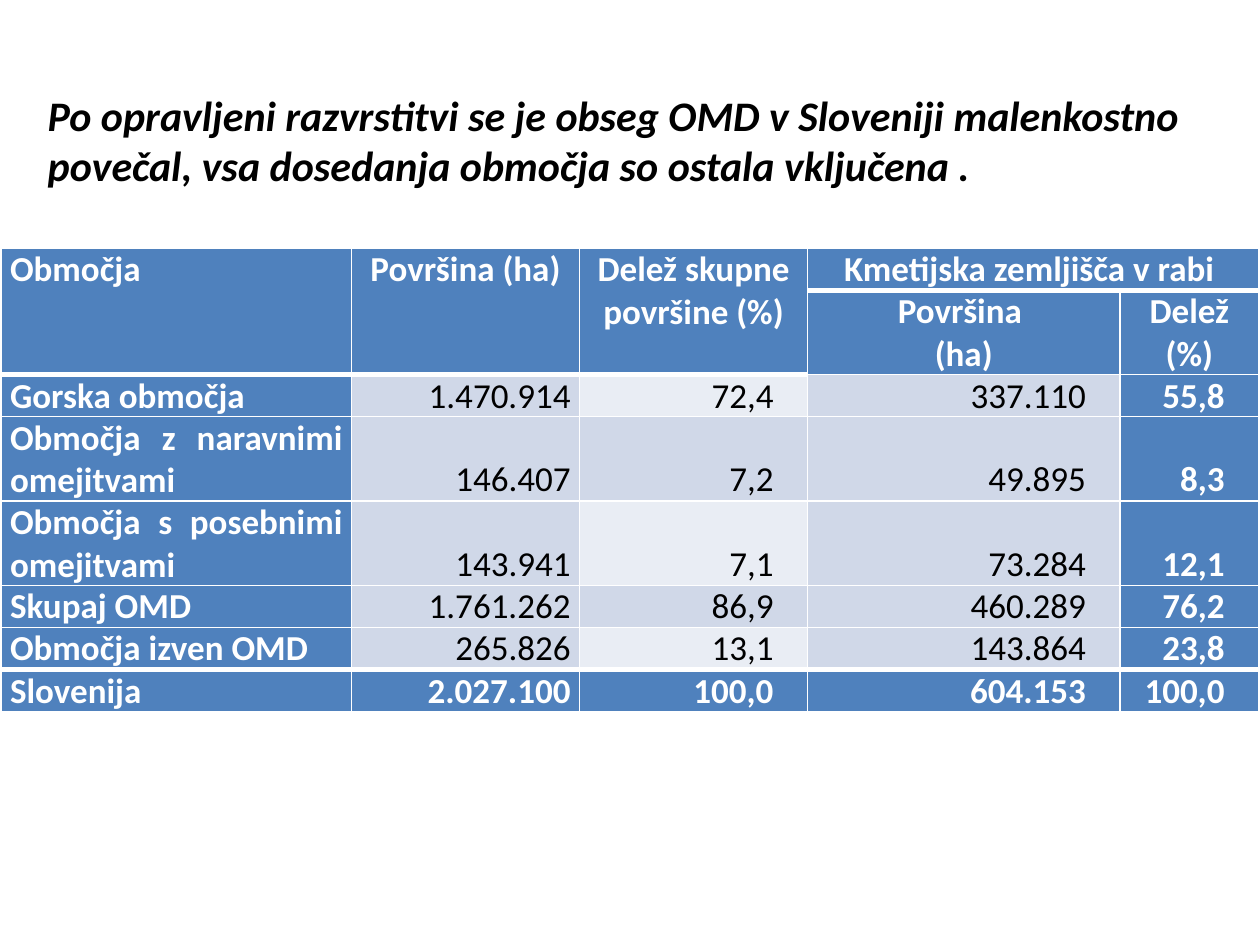
from lxml import etree
from pptx import Presentation
from pptx.dml.color import RGBColor
from pptx.enum.text import MSO_ANCHOR, PP_ALIGN
from pptx.oxml.ns import qn
from pptx.util import Inches, Pt

LEFT, CENTER, RIGHT, JUSTIFY = PP_ALIGN.LEFT, PP_ALIGN.CENTER, PP_ALIGN.RIGHT, PP_ALIGN.JUSTIFY
TOP, BOTTOM = MSO_ANCHOR.TOP, MSO_ANCHOR.BOTTOM
BLUE, BAND, LIGHT_BAND, WHITE, BLACK = "4F81BD", "D0D8E8", "E9EDF4", "FFFFFF", "000000"


def color(value):
    return RGBColor.from_string(value)


def add_border(cell, side, width):
    line = etree.SubElement(cell._tc.get_or_add_tcPr(), qn("a:" + side), w=str(Pt(width)))
    fill = etree.SubElement(line, qn("a:solidFill"))
    etree.SubElement(fill, qn("a:srgbClr"), val=WHITE)


presentation = Presentation()
presentation.slide_width, presentation.slide_height = Inches(10), Inches(7.5)
slide = presentation.slides.add_slide(presentation.slide_layouts[6])

# Introductory statement
statement = slide.shapes.add_textbox(Inches(0.28), Inches(0.25), Inches(9.45), Inches(1.72))
text_frame = statement.text_frame
text_frame.word_wrap = True
text_frame.margin_top = Inches(0.46)
run = text_frame.paragraphs[0].add_run()
run.text = ("Po opravljeni razvrstitvi se je obseg OMD v Sloveniji malenkostno povečal, "
            "vsa dosedanja območja so ostala vključena .")
run.font.name, run.font.size = "Calibri", Pt(24)
run.font.bold = run.font.italic = True
run.font.color.rgb = color(BLACK)

# Table contents: two header rows, five areas and the total
rows = [
    ["Območja", "Površina (ha)", "Delež skupne površine (%)", "Kmetijska zemljišča v rabi ", ""],
    ["", "", "", "Površina \n(ha)", "Delež (%)"],
    ["Gorska območja", "1.470.914", "72,4", "337.110", "55,8"],
    ["Območja z naravnimi omejitvami", "146.407", "7,2", "49.895", "8,3"],
    ["Območja s posebnimi omejitvami", "143.941", "7,1", "73.284", "12,1"],
    ["Skupaj OMD", "1.761.262", "86,9", "460.289", "76,2"],
    ["Območja izven OMD", "265.826", "13,1", "143.864", "23,8"],
    ["Slovenija", "2.027.100", "100,0", "604.153", "100,0"],
]
column_widths = [2.78, 1.81, 1.81, 2.48, 1.1]
tall_rows = (1, 3, 4)
light_rows = (2, 4, 6)
total_row = len(rows) - 1

table = slide.shapes.add_table(len(rows), len(column_widths), Inches(0.01), Inches(1.97),
                               Inches(9.99), Inches(3.67)).table
table.first_row = table.horz_banding = False
for column, width in zip(table.columns, column_widths):
    column.width = Inches(width)
for index, row in enumerate(table.rows):
    row.height = Inches(0.67 if index in tall_rows else 0.33)

# Thick rules lie under the headers and above the total
thick_edges = {(1, c) for c in range(5)} | {(2, c) for c in range(3)} | {(total_row, c) for c in range(5)}

for r, values in enumerate(rows):
    for c, value in enumerate(values):
        cell = table.cell(r, c)
        is_header = r < 2
        is_figure = 2 <= r < total_row and 0 < c < 4

        # Borders and fill
        for side, width in (("lnL", 1), ("lnR", 1),
                            ("lnT", 3 if (r, c) in thick_edges else 1),
                            ("lnB", 3 if (r + 1, c) in thick_edges else 1)):
            add_border(cell, side, width)
        cell.fill.solid()
        figure_fill = LIGHT_BAND if c == 2 and r in light_rows else BAND
        cell.fill.fore_color.rgb = color(figure_fill if is_figure else BLUE)

        # Text
        cell.margin_left = cell.margin_right = Inches(0.07)
        cell.margin_top = cell.margin_bottom = 0
        cell.vertical_anchor = BOTTOM if r in (3, 4) and c else TOP
        if not value:
            continue
        for index, line in enumerate(value.split("\n")):
            paragraph = cell.text_frame.add_paragraph() if index else cell.text_frame.paragraphs[0]
            if is_header:
                paragraph.alignment = CENTER if c else LEFT
            else:
                paragraph.alignment = RIGHT if c else JUSTIFY
                if c > 1:
                    paragraph._p.get_or_add_pPr().set("marR", str(Inches(0.2)))
            run = paragraph.add_run()
            run.text = line
            run.font.name, run.font.size = "Calibri", Pt(20)
            run.font.bold = not is_figure
            run.font.color.rgb = color(BLACK if is_figure else WHITE)

# Header spans
for c in range(3):
    table.cell(0, c).merge(table.cell(1, c))
table.cell(0, 3).merge(table.cell(0, 4))

presentation.save("out.pptx")
